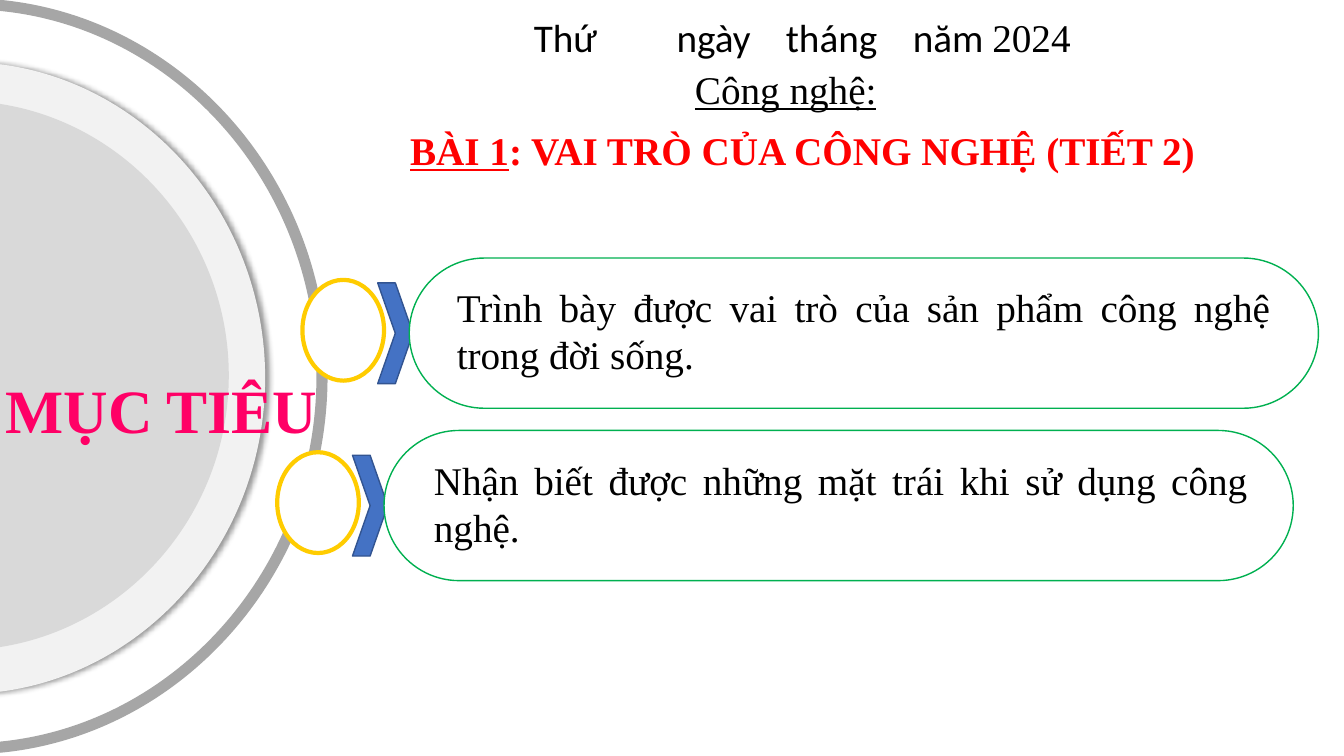
"""Build the lesson objectives slide of a technology class."""
from dataclasses import dataclass
from typing import NamedTuple

from lxml import etree
from pptx import Presentation
from pptx.dml.color import RGBColor
from pptx.enum.shapes import MSO_SHAPE
from pptx.enum.text import MSO_ANCHOR, MSO_AUTO_SIZE, PP_ALIGN
from pptx.oxml.ns import qn
from pptx.util import Emu, Pt

OVAL, CHEVRON, PILL = MSO_SHAPE.OVAL, MSO_SHAPE.CHEVRON, MSO_SHAPE.ROUNDED_RECTANGLE
CENTER, JUSTIFY = PP_ALIGN.CENTER, PP_ALIGN.JUSTIFY
LEFT, TOP, MIDDLE = PP_ALIGN.LEFT, MSO_ANCHOR.TOP, MSO_ANCHOR.MIDDLE
FIT = MSO_AUTO_SIZE.SHAPE_TO_FIT_TEXT
WIDTH, HEIGHT = 12192000, 6858000
COL, ROW = WIDTH // 80, HEIGHT // 45
BEND = 0.55


@dataclass(frozen=True)
class Theme:
    serif: str = "Times New Roman"
    sans: str = "Calibri"
    body: int = 28
    banner: int = 44
    black: str = "000000"
    white: str = "FFFFFF"
    red: str = "FF0000"
    pink: str = "FF0066"
    ring: str = "A6A6A6"
    disc: str = "F2F2F2"
    core: str = "D9D9D9"
    gold: str = "FFCC00"
    blue: str = "4472C4"
    navy: str = "325491"
    green: str = "00B050"


T = Theme()


class Box(NamedTuple):
    col: float
    row: float
    cols: float
    rows: float

    def shifted(self, dc: float, dr: float) -> "Box":
        return Box(self.col + dc, self.row + dr, self.cols, self.rows)

    def emu(self) -> tuple:
        return (Emu(round(self.col * COL)), Emu(round(self.row * ROW)),
                Emu(round(self.cols * COL)), Emu(round(self.rows * ROW)))


class Part(NamedTuple):
    kind: int
    box: Box
    fill: str
    line: str
    weight: float


class Arc(NamedTuple):
    col: float
    row: float
    rx: float
    ry: float

    def points(self) -> list:
        shares = [(0, -1), (BEND, -1), (1, -BEND), (1, 0), (1, BEND), (BEND, 1), (0, 1)]
        return [((self.col + self.rx * x) * COL, (self.row + self.ry * y) * ROW)
                for x, y in shares]


class Run(NamedTuple):
    text: str
    color: str = T.black
    font: str = T.serif
    size: int = T.body
    bold: bool = False
    underline: bool = False


class Label(NamedTuple):
    box: Box
    runs: list
    align: int = CENTER
    anchor: int = TOP
    inset: float = 0.6
    tabs: tuple = ()


GOAL_PARTS = [
    Part(OVAL, Box(18, 16.66, 4.86, 6), T.white, T.gold, 3),
    Part(CHEVRON, Box(22.48, 16.84, 2.1, 6), T.blue, T.navy, 1),
    Part(PILL, Box(24.36, 15.36, 54.12, 8.94), T.white, T.green, 1),
]
GOAL_TEXT = Box(26.6, 16.56, 49.62, 6.24)
PART_STEP, TEXT_STEP = (-1.5, 10.26), (-1.36, 10.3)
GOALS = [
    "Trình bày được vai trò của sản phẩm công nghệ trong đời sống.",
    "Nhận biết được những mặt trái khi sử dụng công nghệ.",
]
RING = [Arc(-1.92, 22.4, 21.42, 22.5), Arc(-1.92, 22.4, 20.76, 21.84)]
DISC, CORE = Arc(-2.16, 22.5, 17.94, 18.81), Arc(-2.4, 22.35, 16.02, 16.35)
LABELS = [
    Label(Box(-3.22, 21.82, 25.68, 5.04),
          [Run("MỤC TIÊU", T.pink, size=T.banner, bold=True)], anchor=MIDDLE),
    Label(Box(16.26, 7.22, 63, 3.42),
          [Run("BÀI 1", T.red, bold=True, underline=True),
           Run(": VAI TRÒ CỦA CÔNG NGHỆ (TIẾT 2)", T.red, bold=True)]),
    Label(Box(21.48, 0.48, 52.5, 3.42),
          [Run("Thứ\tngày\ttháng\tnăm ", font=T.sans), Run("2024")],
          align=LEFT, inset=10.3, tabs=(8.5, 15, 22.56)),
    Label(Box(26.52, 3.58, 40.5, 3.42), [Run("Công nghệ:", underline=True)]),
]


def rgb(color: str) -> RGBColor:
    return RGBColor.from_string(color)


def bend_lines(lines: list) -> None:
    for i in range(0, len(lines) - 2, 3):
        curve = etree.Element(qn("a:cubicBezTo"))
        lines[i].addprevious(curve)
        for line in lines[i:i + 3]:
            curve.append(line[0])
            line.getparent().remove(line)


def draw_curve(shapes, arcs: list, fill: str):
    points = arcs[0].points()
    for arc in arcs[1:]:
        points += arc.points()[::-1]
    fb = shapes.build_freeform(*points[0])
    fb.add_line_segments(points[1:], close=True)
    sp = fb.convert_to_shape()
    lines = list(sp._element.iter(qn("a:lnTo")))
    for i in range(len(arcs)):
        bend_lines(lines[7 * i:7 * i + 6])
    sp.shadow.inherit = False
    sp.fill.solid()
    sp.fill.fore_color.rgb = rgb(fill)
    sp.line.fill.background()
    return sp


def add_shadow(sp, color: str) -> None:
    effects = sp._element.spPr.find(qn("a:effectLst"))
    shadow = etree.SubElement(effects, qn("a:outerShdw"), blurRad=str(Pt(4)),
                              dist=str(Pt(3)), dir="0", algn="l", rotWithShape="0")
    clr = etree.SubElement(shadow, qn("a:srgbClr"), val=color)
    etree.SubElement(clr, qn("a:alpha"), val="40000")


def draw_part(shapes, part: Part, dc: float, dr: float) -> None:
    sp = shapes.add_shape(part.kind, *part.box.shifted(dc, dr).emu())
    sp.shadow.inherit = False
    sp.fill.solid()
    sp.fill.fore_color.rgb = rgb(part.fill)
    sp.line.color.rgb = rgb(part.line)
    sp.line.width = Pt(part.weight)
    if part.kind == PILL:
        sp.adjustments[0] = 0.5


def draw_label(shapes, label: Label) -> None:
    tf = shapes.add_textbox(*label.box.emu()).text_frame
    tf.word_wrap = True
    tf.auto_size = FIT
    tf.vertical_anchor = label.anchor
    tf.margin_left = Emu(round(label.inset * COL))
    p = tf.paragraphs[0]
    p.text = label.runs[0].text
    p.alignment = label.align
    if label.tabs:
        stops = etree.SubElement(p._p.get_or_add_pPr(), qn("a:tabLst"))
        for tab in label.tabs:
            etree.SubElement(stops, qn("a:tab"), pos=str(round(tab * COL)), algn="l")
    for run in label.runs[1:]:
        p.add_run().text = run.text
    for r, run in zip(p.runs, label.runs):
        r.font.name, r.font.size = run.font, Pt(run.size)
        r.font.bold, r.font.underline = run.bold, run.underline
        r.font.color.rgb = rgb(run.color)


def main() -> None:
    prs = Presentation()
    prs.slide_width, prs.slide_height = Emu(WIDTH), Emu(HEIGHT)
    shapes = prs.slides.add_slide(prs.slide_layouts[6]).shapes
    draw_curve(shapes, RING, T.ring)
    add_shadow(draw_curve(shapes, [DISC], T.disc), T.black)
    draw_curve(shapes, [CORE], T.core)
    for label in LABELS:
        draw_label(shapes, label)
    for i, goal in enumerate(GOALS):
        for part in GOAL_PARTS:
            draw_part(shapes, part, *(i * step for step in PART_STEP))
        box = GOAL_TEXT.shifted(*(i * step for step in TEXT_STEP))
        draw_label(shapes, Label(box, [Run(goal)], JUSTIFY))
    prs.save("out.pptx")


if __name__ == "__main__":
    main()
